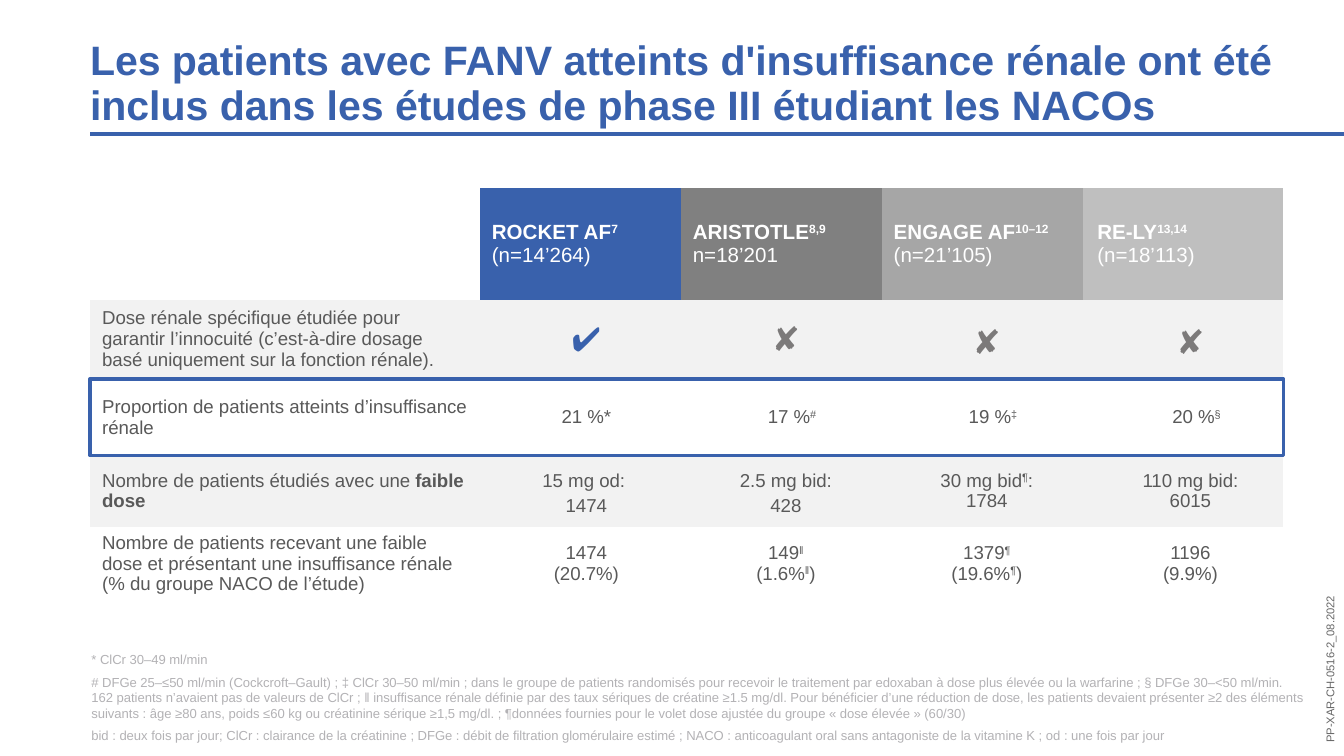
from lxml.etree import SubElement
from pptx import Presentation
from pptx.dml.color import RGBColor
from pptx.enum.shapes import MSO_CONNECTOR as Connector, MSO_SHAPE as Shape
from pptx.enum.text import MSO_ANCHOR as Anchor, MSO_AUTO_SIZE as AutoSize, PP_ALIGN as Align
from pptx.oxml.ns import qn
from pptx.util import Inches, Pt

COLORS = {
    "blue": "3961AC", "dark": "808080", "mid": "A6A6A6", "light": "BFBFBF",
    "band": "F2F2F2", "white": "FFFFFF", "text": "595959", "cross": "7C7A7A",
    "note": "B3B2B5", "code": "666666",
}
LEFT, TABLE_TOP, RULE_Y = 0.67, 1.4, 1
TABLE_WIDTH, LABEL_WIDTH = 8.88, 2.9
COLUMNS = [LABEL_WIDTH] + [(TABLE_WIDTH - LABEL_WIDTH) / 4] * 4
ROWS = [0.83, 0.59, 0.57, 0.53, 0.55]
INDENTS = [0.09, 0.09, 0.07, 0.07, 0.11]
HEADER_FILLS = [None, "blue", "dark", "mid", "light"]
ROW_FILLS = [None, "band", "white", "band", "white"]
HIGHLIGHT_ROW = 2
LOOSE_CELLS = {(1, 3), (1, 4), (3, 1), (3, 2)}

TITLE = ("Les patients avec FANV atteints d'insuffisance rénale ont été "
         "inclus dans les études de phase III étudiant les NACOs")
STUDIES = [
    [""],
    ["|ROCKET AF^7^|", "(n=14’264)"],
    ["|ARISTOTLE^8,9^|", "n=18’201"],
    ["|ENGAGE AF^10–12^|", "(n=21’105)"],
    ["|RE-LY^13,14^|", "(n=18’113)"],
]
FINDINGS = [
    ["Dose rénale spécifique étudiée pour garantir l’innocuité (c’est-à-dire dosage "
     "basé uniquement sur la fonction rénale).", "✔", "✘", "✘", "✘"],
    ["Proportion de patients atteints d’insuffisance rénale",
     "21 %*", "17 %^#^", "19 %^‡^", "20 %^§^"],
    ["Nombre de patients étudiés avec une |faible dose|",
     "15 mg od: \n1474", "2.5 mg bid:\n428", "30 mg bid^¶^:\n1784", "110 mg bid:\n6015"],
    ["Nombre de patients recevant une faible \ndose et présentant une insuffisance rénale \n"
     "(% du groupe NACO de l’étude)",
     "1474\n(20.7%)", "149^ǁ^\n(1.6%^ǁ^)", "1379^¶^\n(19.6%^¶^)", "1196\n(9.9%)"],
]
NOTES = [
    "* ClCr 30–49 ml/min",
    "# DFGe 25–≤50 ml/min (Cockcroft–Gault) ; ‡ ClCr 30–50 ml/min ; dans le groupe de patients "
    "randomisés pour recevoir le traitement par edoxaban à dose plus élevée ou la warfarine ; "
    "§ DFGe 30–<50 ml/min. 162 patients n’avaient pas de valeurs de ClCr ; ǁ insuffisance rénale "
    "définie par des taux sériques de créatine ≥1.5 mg/dl. Pour bénéficier d’une réduction de dose, "
    "les patients devaient présenter ≥2 des éléments suivants : âge ≥80 ans, poids ≤60 kg ou "
    "créatinine sérique ≥1,5 mg/dl. ; ¶données fournies pour le volet dose ajustée du groupe "
    "« dose élevée » (60/30)",
    "bid : deux fois par jour; ClCr : clairance de la créatinine ; DFGe : débit de filtration "
    "glomérulaire estimé ; NACO : anticoagulant oral sans antagoniste de la vitamine K ; "
    "od : une fois par jour",
]
TRACKING_CODE = "PP-XAR-CH-0516-2_08.2022"


def rgb(name):
    """Return the palette colour of that name."""
    return RGBColor.from_string(COLORS[name])


def add_run(paragraph, words, size, color, bold=False, raised=False):
    """Append one formatted run."""
    run = paragraph.add_run()
    run.text = words
    font = run.font
    font.name, font.size, font.bold = "Arial", Pt(size), bold
    font.color.rgb = rgb(color)
    if raised:
        run._r.get_or_add_rPr().set("baseline", "30000")


def write(frame, paragraphs, size, color, align=Align.LEFT, spacing=1.0, before=0, bold=False):
    """Fill a text frame, where | toggles bold and ^ toggles superscript."""
    for index, content in enumerate(paragraphs):
        paragraph = frame.add_paragraph() if index else frame.paragraphs[0]
        paragraph.alignment = align
        paragraph.line_spacing = spacing
        paragraph.space_before = Pt(before)
        for number, line in enumerate(content.split("\n")):
            if number:
                paragraph.add_line_break()
            for strong, part in enumerate(line.split("|")):
                for raised, words in enumerate(part.split("^")):
                    if words:
                        add_run(paragraph, words, size, color,
                                bold or strong % 2 == 1, raised % 2 == 1)


def place_holder(holder, left, top, width, height):
    """Move a placeholder and strip its margins."""
    holder.left, holder.top = Inches(left), Inches(top)
    holder.width, holder.height = Inches(width), Inches(height)
    frame = holder.text_frame
    frame.margin_left = frame.margin_right = frame.margin_top = frame.margin_bottom = 0
    frame.vertical_anchor = Anchor.BOTTOM
    frame.auto_size = AutoSize.NONE
    frame.word_wrap = True
    return frame


def add_title(slide):
    """Write the heading and draw the rule beneath it."""
    frame = place_holder(slide.shapes.title, LEFT, 0.29, 9.06, 0.67)
    write(frame, [TITLE], 22, "blue", spacing=0.9, bold=True)
    rule = slide.shapes.add_connector(
        Connector.STRAIGHT, Inches(LEFT), Inches(RULE_Y), Inches(10), Inches(RULE_Y))
    rule.line.color.rgb = rgb("blue")
    rule.line.width = Pt(2.25)
    SubElement(rule._element.spPr, qn("a:effectLst"))


def add_notes(slide):
    """Write the footnotes without bullets."""
    frame = place_holder(slide.placeholders[1], 0.68, 4.82, 9.05, 0.71)
    write(frame, NOTES, 7, "note", before=3.5)
    for paragraph in frame.paragraphs:
        settings = paragraph._p.get_or_add_pPr()
        settings.set("marL", "0")
        settings.set("indent", "0")
        SubElement(settings, qn("a:buNone"))


def style_cell(cell, fill, left, right=0.0):
    """Set the fill, margins and anchor of a table cell."""
    if fill:
        cell.fill.solid()
        cell.fill.fore_color.rgb = rgb(fill)
    else:
        cell.fill.background()
    cell.margin_left, cell.margin_right = Inches(left), Inches(right)
    cell.margin_top = cell.margin_bottom = 0
    cell.vertical_anchor = Anchor.MIDDLE


def add_studies_table(slide):
    """Build the comparison of the four studies."""
    frame = slide.shapes.add_table(
        len(ROWS), len(COLUMNS), Inches(LEFT), Inches(TABLE_TOP),
        Inches(TABLE_WIDTH), Inches(sum(ROWS)))
    table = frame.table
    table.horz_banding = table.first_row = False
    style = table._tbl.tblPr.find(qn("a:tableStyleId"))
    style.text = "{2D5ABB26-0587-4C30-8999-92F81FD0307C}"
    for column, width in zip(table.columns, COLUMNS):
        column.width = Inches(width)
    for row, height in zip(table.rows, ROWS):
        row.height = Inches(height)
    for col, study in enumerate(STUDIES):
        cell = table.cell(0, col)
        style_cell(cell, HEADER_FILLS[col], max(INDENTS[col], 0.09), 0.09)
        write(cell.text_frame, study, 11, "white")
    for row, findings in enumerate(FINDINGS, 1):
        for col, finding in enumerate(findings):
            cell = table.cell(row, col)
            extra = 0.09 if row == HIGHLIGHT_ROW and col > 1 else 0
            style_cell(cell, ROW_FILLS[row], INDENTS[col] + extra, 0 if col else 0.09)
            mark = {"✔": "blue", "✘": "cross"}.get(finding)
            write(cell.text_frame, [finding], 18 if mark else 10, mark or "text",
                  Align.CENTER if col else Align.LEFT,
                  1.2 if (row, col) in LOOSE_CELLS else 1.0, bold=bool(mark))


def add_highlight(slide):
    """Frame the row with the share of renal patients."""
    top = TABLE_TOP + sum(ROWS[:HIGHLIGHT_ROW])
    outline = slide.shapes.add_shape(
        Shape.RECTANGLE, Inches(LEFT), Inches(top),
        Inches(TABLE_WIDTH), Inches(ROWS[HIGHLIGHT_ROW]))
    outline.shadow.inherit = False
    outline.fill.background()
    outline.line.color.rgb = rgb("blue")
    outline.line.width = Pt(2)


def add_tracking_code(slide):
    """Write the document code up the right edge."""
    code = slide.shapes.add_textbox(Inches(9.24), Inches(4.87), Inches(1.31), Inches(0.2))
    code.rotation = 270
    code.text_frame.word_wrap = False
    write(code.text_frame, [TRACKING_CODE], 6, "code")


def main():
    """Build and save the slide."""
    deck = Presentation()
    deck.slide_width = Inches(10)
    deck.slide_height = deck.slide_width * 9 // 16
    slide = deck.slides.add_slide(deck.slide_layouts[1])
    add_tracking_code(slide)
    add_title(slide)
    add_notes(slide)
    add_studies_table(slide)
    add_highlight(slide)
    deck.save("out.pptx")


if __name__ == "__main__":
    main()
